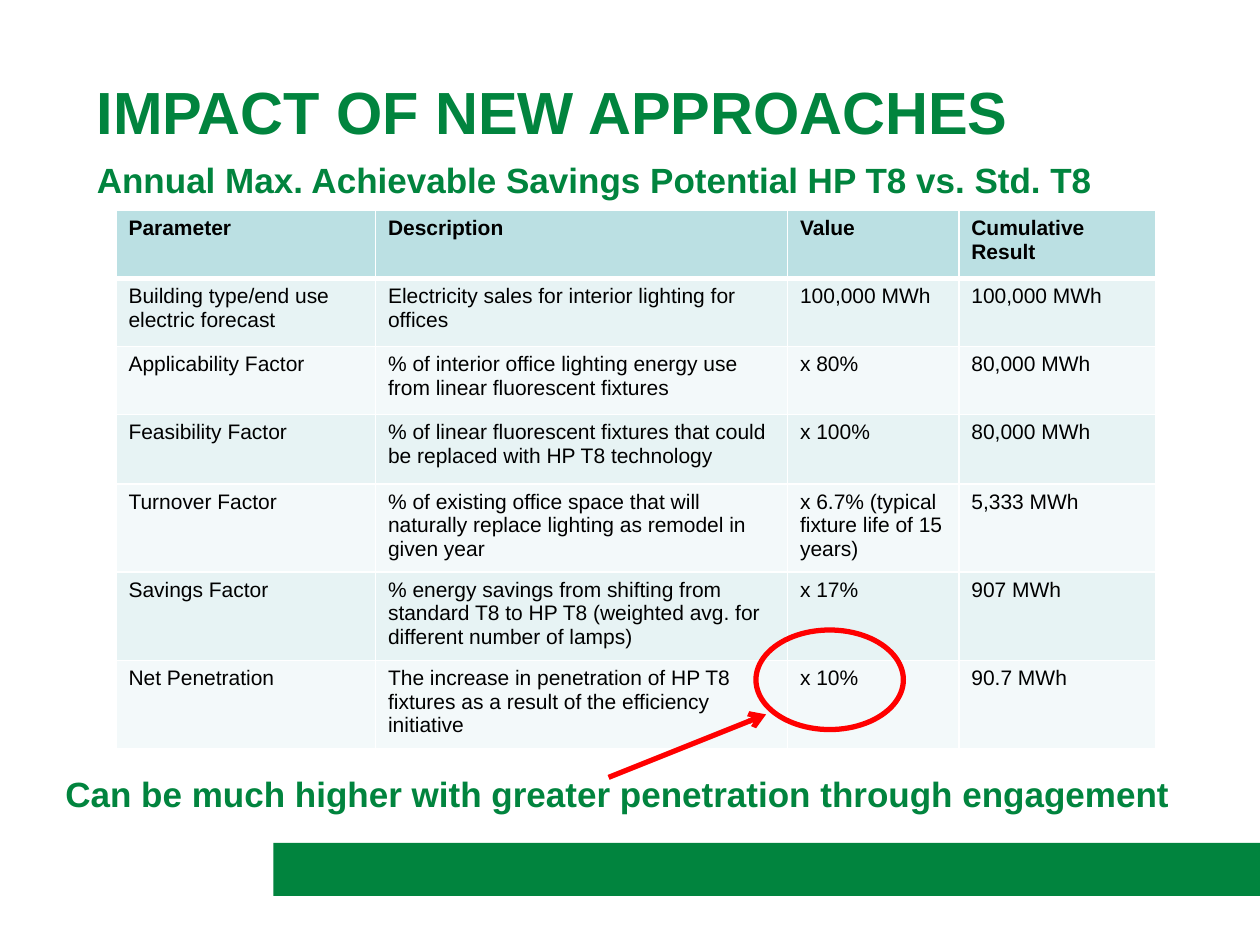
"""Build the slide on the impact of new approaches, with its savings table."""
import pptx
import pptx.dml.color
import pptx.enum.shapes
import pptx.enum.text
import pptx.oxml
import pptx.oxml.ns
import pptx.util

Inches = pptx.util.Inches
Pt = pptx.util.Pt
RGBColor = pptx.dml.color.RGBColor
MSO_SHAPE = pptx.enum.shapes.MSO_SHAPE
MSO_ANCHOR = pptx.enum.text.MSO_ANCHOR

GREEN = RGBColor(0x01, 0x84, 0x3E)
RED = RGBColor(0xFF, 0x00, 0x00)
BLACK = RGBColor(0x00, 0x00, 0x00)
HEADER_FILL = RGBColor(0xBB, 0xE0, 0xE3)
BAND_FILLS = [RGBColor(0xF3, 0xF9, 0xFA), RGBColor(0xE7, 0xF3, 0xF4)]

COLUMN_WIDTHS = [2.06, 3.27, 1.36, 1.56]
ROW_HEIGHTS = [0.54, 0.54, 0.54, 0.55, 0.66, 0.66, 0.66]
ROWS = [
    ["Parameter", "Description", "Value", "Cumulative Result"],
    ["Building type/end use electric forecast",
     "Electricity sales for interior lighting for offices",
     "100,000 MWh", "100,000 MWh"],
    ["Applicability Factor",
     "% of interior office lighting energy use from linear fluorescent fixtures",
     "x 80%", "80,000 MWh"],
    ["Feasibility Factor",
     "% of linear fluorescent fixtures that could be replaced with HP T8 technology",
     "x 100%", "80,000 MWh"],
    ["Turnover Factor",
     "% of existing office space that will naturally replace lighting as remodel in given year",
     "x 6.7% (typical fixture life of 15 years)", "5,333 MWh"],
    ["Savings Factor",
     "% energy savings from shifting from standard T8 to HP T8 "
     "(weighted avg. for different number of lamps)",
     "x 17%", "907 MWh"],
    ["Net Penetration",
     "The increase in penetration of HP T8 fixtures as a result of the efficiency initiative",
     "x 10%", "90.7 MWh"],
]


def write_text(text_frame, text, size=12, color=BLACK, bold=False, line_spacing=None):
    text_frame.word_wrap = True
    paragraph = text_frame.paragraphs[0]
    paragraph.line_spacing = line_spacing
    run = paragraph.add_run()
    run.text = text
    run.font.name = "Arial"
    run.font.size = Pt(size)
    run.font.bold = bold
    run.font.color.rgb = color


def set_borders(cell, bottom_width):
    properties = cell._tc.get_or_add_tcPr()
    for side, width in [("L", 1), ("R", 1), ("T", 1), ("B", bottom_width)]:
        properties.append(pptx.oxml.parse_xml(
            f'<a:ln{side} {pptx.oxml.ns.nsdecls("a")} w="{Pt(width)}"><a:solidFill>'
            f'<a:srgbClr val="FFFFFF"/></a:solidFill></a:ln{side}>'))


presentation = pptx.Presentation()
presentation.slide_width = Inches(10)
presentation.slide_height = Inches(7.5)
slide = presentation.slides.add_slide(presentation.slide_layouts[6])
shapes = slide.shapes

footer_bar = shapes.add_shape(
    MSO_SHAPE.RECTANGLE, Inches(2.17), Inches(6.69), Inches(7.83), Inches(0.42))
footer_bar.shadow.inherit = False
footer_bar.fill.solid()
footer_bar.fill.fore_color.rgb = GREEN
footer_bar.line.fill.background()

title = shapes.add_textbox(Inches(0.67), Inches(0.5), Inches(9), Inches(0.75))
title.text_frame.vertical_anchor = MSO_ANCHOR.MIDDLE
write_text(title.text_frame, "IMPACT OF NEW APPROACHES", size=34, color=GREEN, bold=True)

subtitle = shapes.add_textbox(Inches(0.67), Inches(1.25), Inches(8.5), Inches(0.4))
write_text(subtitle.text_frame, "Annual Max. Achievable Savings Potential HP T8 vs. Std. T8",
           size=20, color=GREEN, bold=True, line_spacing=0.9)

table = shapes.add_table(
    len(ROWS), len(COLUMN_WIDTHS), Inches(0.92), Inches(1.67),
    Inches(sum(COLUMN_WIDTHS)), Inches(sum(ROW_HEIGHTS))).table
for column, width in zip(table.columns, COLUMN_WIDTHS):
    column.width = Inches(width)
for row_index, (row, height, texts) in enumerate(zip(table.rows, ROW_HEIGHTS, ROWS)):
    row.height = Inches(height)
    is_header = row_index == 0
    for cell, text in zip(row.cells, texts):
        set_borders(cell, bottom_width=3 if is_header else 1)
        cell.fill.solid()
        cell.fill.fore_color.rgb = HEADER_FILL if is_header else BAND_FILLS[row_index % 2]
        write_text(cell.text_frame, text, bold=is_header)

conclusion = shapes.add_textbox(Inches(0.42), Inches(6.08), Inches(9.25), Inches(0.44))
write_text(conclusion.text_frame,
           "Can be much higher with greater penetration through engagement",
           size=20, color=GREEN, bold=True)

arrow = shapes.add_connector(
    pptx.enum.shapes.MSO_CONNECTOR.STRAIGHT,
    Inches(4.83), Inches(6.17), Inches(6.08), Inches(5.67))
arrow.line.color.rgb = RED
arrow.line.width = Pt(3)
arrow.line._get_or_add_ln().append(pptx.oxml.parse_xml(
    f'<a:tailEnd {pptx.oxml.ns.nsdecls("a")} type="arrow"/>'))
arrow._element.spPr.append(pptx.oxml.parse_xml(
    f'<a:effectLst {pptx.oxml.ns.nsdecls("a")}/>'))

highlight = shapes.add_shape(
    MSO_SHAPE.OVAL, Inches(6), Inches(5), Inches(1.17), Inches(0.79))
highlight.shadow.inherit = False
highlight.fill.background()
highlight.line.color.rgb = RED
highlight.line.width = Pt(3)

presentation.save("out.pptx")
